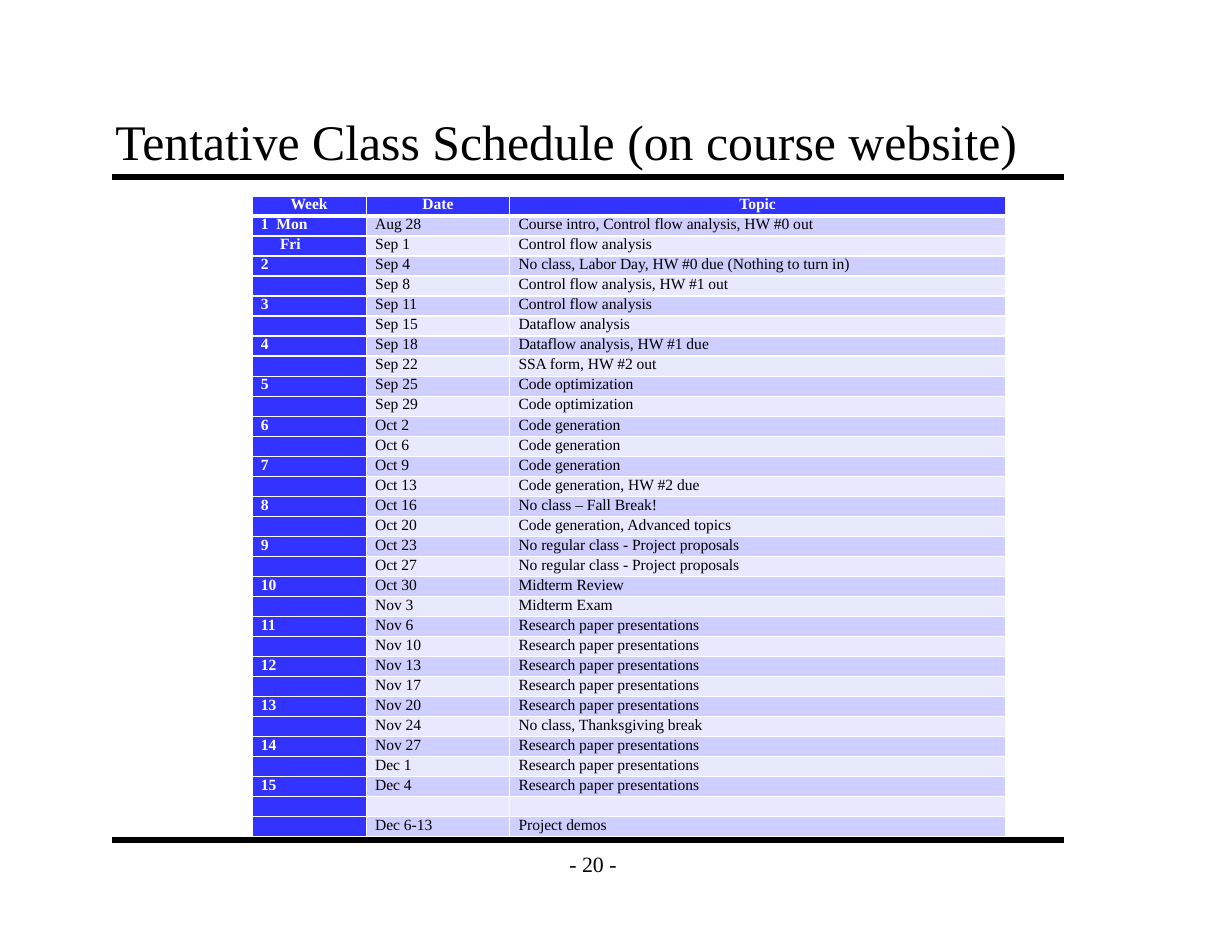
from lxml.etree import SubElement
from pptx import Presentation
from pptx.dml.color import RGBColor
from pptx.enum.shapes import MSO_CONNECTOR
from pptx.enum.text import MSO_ANCHOR, MSO_AUTO_SIZE, PP_ALIGN
from pptx.oxml.ns import qn
from pptx.util import Inches, Pt

BLACK = RGBColor(0x00, 0x00, 0x00)
WHITE = RGBColor(0xFF, 0xFF, 0xFF)
BLUE = RGBColor(0x33, 0x33, 0xFF)
LAVENDER = RGBColor(0xCE, 0xCE, 0xFF)
PALE_LAVENDER = RGBColor(0xE8, 0xE8, 0xFF)

FONT_NAME = "Times New Roman"
TITLE_FORMAT = {"name": FONT_NAME, "size": Pt(32)}
NUMBER_FORMAT = {"name": FONT_NAME, "size": Pt(14)}
LABEL_FORMAT = {"name": FONT_NAME, "size": Pt(10), "bold": True}
BODY_FORMAT = {"name": FONT_NAME, "size": Pt(10), "bold": False}
FRAME_FORMAT = {
    "margin_left": Inches(0.11), "margin_right": Inches(0.11),
    "margin_top": Inches(0.06), "margin_bottom": Inches(0.06),
    "auto_size": MSO_AUTO_SIZE.NONE,
}
CELL_FORMAT = {
    "margin_left": Inches(0.08), "margin_right": Inches(0.08),
    "margin_top": 0, "margin_bottom": 0,
}

COLUMN_WIDTHS = [1.02, 1.28, 4.43]
TABLE_HEIGHT = 5.73
FRIDAY_INDENT = 0.17
HEADINGS = ("Week", "Date", "Topic")
SESSIONS = [
    ("1  Mon", "Aug 28", "Course intro, Control flow analysis, HW #0 out"),
    ("Fri", "Sep 1", "Control flow analysis"),
    ("2", "Sep 4", "No class, Labor Day, HW #0 due (Nothing to turn in)"),
    ("", "Sep 8", "Control flow analysis, HW #1 out"),
    ("3", "Sep 11", "Control flow analysis"),
    ("", "Sep 15", "Dataflow analysis"),
    ("4", "Sep 18", "Dataflow analysis, HW #1 due"),
    ("", "Sep 22", "SSA form, HW #2 out"),
    ("5", "Sep 25", "Code optimization"),
    ("", "Sep 29", "Code optimization"),
    ("6", "Oct 2", "Code generation"),
    ("", "Oct 6", "Code generation"),
    ("7", "Oct 9", "Code generation"),
    ("", "Oct 13", "Code generation, HW #2 due"),
    ("8", "Oct 16", "No class – Fall Break!"),
    ("", "Oct 20", "Code generation, Advanced topics"),
    ("9", "Oct 23", "No regular class - Project proposals"),
    ("", "Oct 27", "No regular class - Project proposals"),
    ("10", "Oct 30", "Midterm Review"),
    ("", "Nov 3", "Midterm Exam"),
    ("11", "Nov 6", "Research paper presentations"),
    ("", "Nov 10", "Research paper presentations"),
    ("12", "Nov 13", "Research paper presentations"),
    ("", "Nov 17", "Research paper presentations"),
    ("13", "Nov 20", "Research paper presentations"),
    ("", "Nov 24", "No class, Thanksgiving break"),
    ("14", "Nov 27", "Research paper presentations"),
    ("", "Dec 1", "Research paper presentations"),
    ("15", "Dec 4", "Research paper presentations"),
    ("", "", ""),
    ("", "Dec 6-13", "Project demos"),
]


def set_attributes(target, values):
    for name, value in values.items():
        setattr(target, name, value)


def write_text(paragraph, text, font_format, color, alignment):
    paragraph.alignment = alignment
    if text:
        run = paragraph.add_run()
        run.text = text
        set_attributes(run.font, font_format)
        run.font.color.rgb = color
    else:
        size = str(int(font_format["size"].pt * 100))
        SubElement(paragraph._p, qn("a:endParaRPr"), sz=size)


def add_title(slide, text):
    title = slide.shapes.title
    set_attributes(title, {"left": Inches(0.92), "top": Inches(0.91),
                           "width": Inches(8.5), "height": Inches(0.67)})
    set_attributes(title.text_frame, FRAME_FORMAT)
    title.text_frame.vertical_anchor = MSO_ANCHOR.BOTTOM
    write_text(title.text_frame.paragraphs[0], text, TITLE_FORMAT, BLACK, PP_ALIGN.LEFT)


def add_rule(slide, top):
    rule = slide.shapes.add_connector(
        MSO_CONNECTOR.STRAIGHT, Inches(1), Inches(top), Inches(9.5), Inches(top))
    rule.line.color.rgb = BLACK
    rule.line.width = Pt(4)
    SubElement(rule._element.spPr, qn("a:effectLst"))


def add_page_number(slide, text):
    box = slide.shapes.add_textbox(Inches(4.92), Inches(7.5), Inches(0.75), Inches(0.42))
    set_attributes(box.text_frame, FRAME_FORMAT)
    set_attributes(box.text_frame, {"word_wrap": False, "vertical_anchor": MSO_ANCHOR.MIDDLE})
    write_text(box.text_frame.paragraphs[0], text, NUMBER_FORMAT, BLACK, PP_ALIGN.CENTER)


def set_borders(cell, row_index):
    widths = {"lnL": 1, "lnR": 1,
              "lnT": 3 if row_index == 1 else 1,
              "lnB": 3 if row_index == 0 else 1}
    properties = cell._tc.get_or_add_tcPr()
    for side, width in widths.items():
        line = SubElement(properties, qn(f"a:{side}"), w=str(Pt(width)))
        fill = SubElement(line, qn("a:solidFill"))
        SubElement(fill, qn("a:srgbClr"), val=str(WHITE))


def format_cell(cell, text, row_index, column_index):
    is_heading = row_index == 0
    is_label = is_heading or column_index == 0
    band = LAVENDER if row_index % 2 else PALE_LAVENDER
    set_attributes(cell, CELL_FORMAT)
    set_borders(cell, row_index)
    cell.fill.solid()
    cell.fill.fore_color.rgb = BLUE if is_label else band
    paragraph = cell.text_frame.paragraphs[0]
    write_text(paragraph, text,
               LABEL_FORMAT if is_label else BODY_FORMAT,
               WHITE if is_label else BLACK,
               PP_ALIGN.CENTER if is_heading else PP_ALIGN.LEFT)
    if text == "Fri":
        paragraph._p.get_or_add_pPr().set("marL", str(Inches(FRIDAY_INDENT)))


def add_schedule(slide):
    rows = [HEADINGS] + SESSIONS
    table = slide.shapes.add_table(
        len(rows), len(COLUMN_WIDTHS), Inches(2.25), Inches(1.75),
        Inches(sum(COLUMN_WIDTHS)), Inches(TABLE_HEIGHT)).table
    for column, width in zip(table.columns, COLUMN_WIDTHS):
        column.width = Inches(width)
    for row_index, values in enumerate(rows):
        for column_index, text in enumerate(values):
            format_cell(table.cell(row_index, column_index), text, row_index, column_index)


def main():
    presentation = Presentation()
    presentation.slide_width = Inches(11)
    presentation.slide_height = Inches(8.5)
    slide = presentation.slides.add_slide(presentation.slide_layouts[5])
    for top in (1.58, 7.5):
        add_rule(slide, top)
    add_page_number(slide, "- 20 -")
    add_title(slide, "Tentative Class Schedule (on course website)")
    add_schedule(slide)
    presentation.save("out.pptx")


if __name__ == "__main__":
    main()
